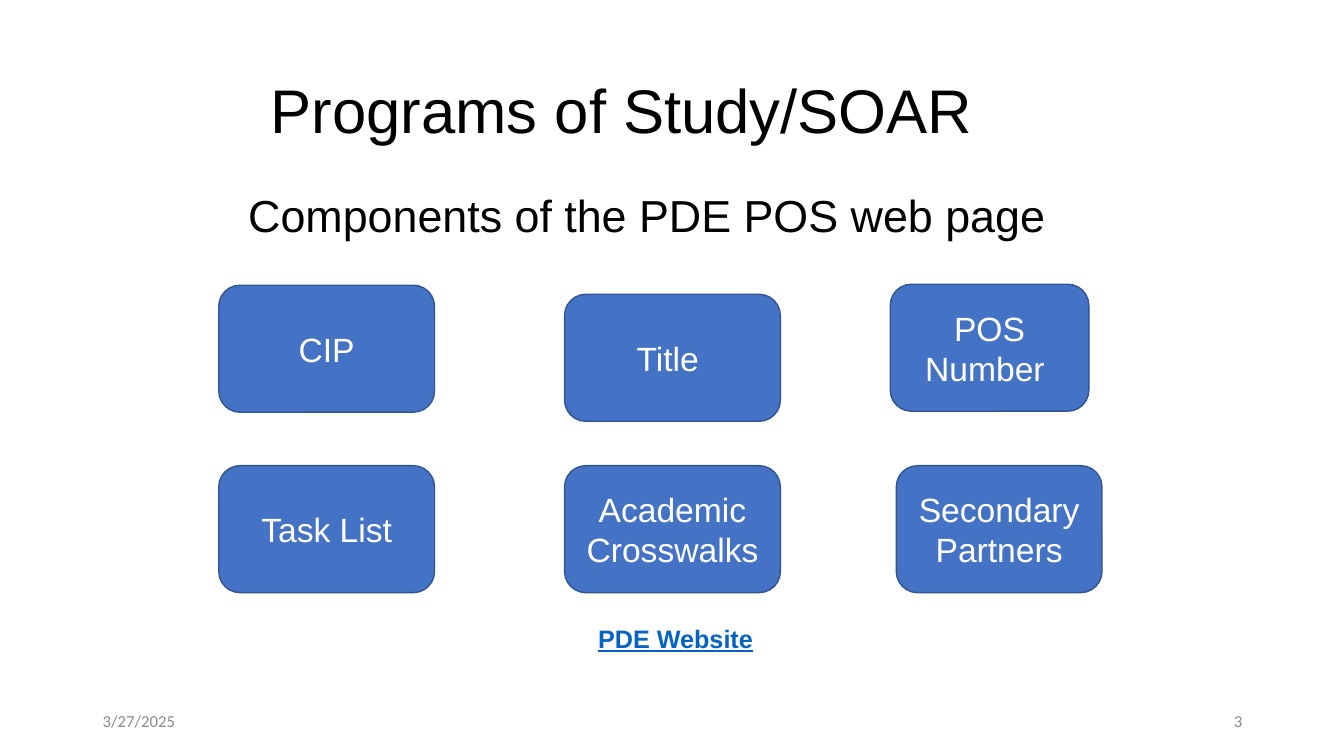
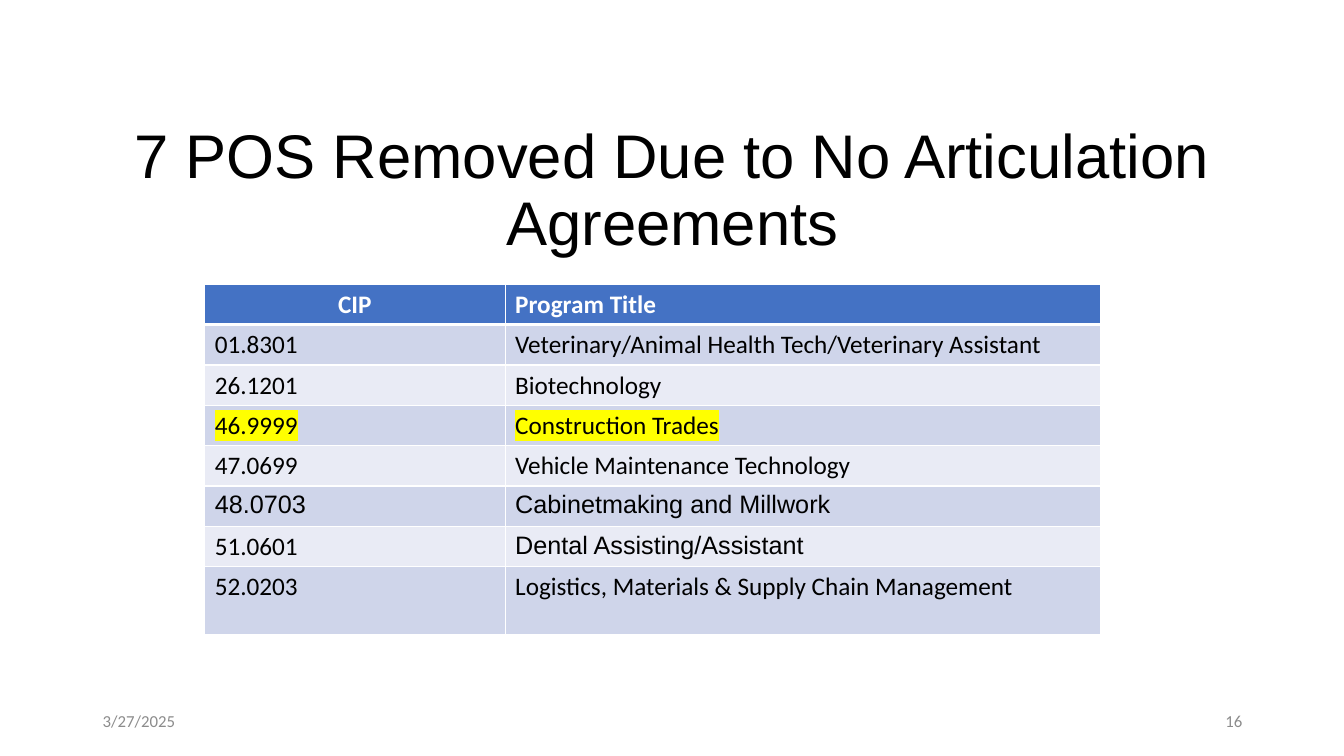
from lxml.etree import SubElement
from pptx import Presentation
from pptx.dml.color import RGBColor
from pptx.enum.shapes import MSO_SHAPE as Shape
from pptx.enum.text import MSO_ANCHOR as Anchor, PP_ALIGN as Align
from pptx.oxml.ns import qn
from pptx.util import Inches, Pt

COLORS = {
    "text": "000000", "white": "FFFFFF", "footer": "8C8C8C",
    "blue": "4472C4", "outline": "325491", "link": "0563C1",
    "band_dark": "CFD5EA", "band_light": "E9EBF5", "highlight": "FFFF00",
}
HEADING_FONT, BODY_FONT = "Arial", "Calibri"
DATE = "3/27/2025"

COMPONENTS_TITLE = "Programs of Study/SOAR"
COMPONENTS_SUBTITLE = "Components of the PDE POS web page"
# Label, left, top, width; some labels end in a no-break space
COMPONENTS = [
    ("CIP", 2.17, 2.83, 2.14),
    ("Title ", 5.6, 2.92, 2.14),
    ("POS Number ", 8.83, 2.82, 1.97),
    ("Task List", 2.17, 4.62, 2.14),
    ("Academic Crosswalks", 5.6, 4.62, 2.14),
    ("Secondary Partners", 8.89, 4.62, 2.04),
]
COMPONENT_HEIGHT = 1.26
WEBSITE_LABEL = "PDE Website"

REMOVED_TITLE = "7 POS Removed Due to No Articulation Agreements"
REMOVED_HEADER = ("CIP", "Program Title")
REMOVED_PROGRAMS = [
    ("01.8301", "Veterinary/Animal Health Tech/Veterinary Assistant"),
    ("26.1201", "Biotechnology"),
    ("46.9999", "Construction Trades"),
    ("47.0699", "Vehicle Maintenance Technology"),
    ("48.0703", "Cabinetmaking and Millwork"),
    ("51.0601", "Dental Assisting/Assistant"),
    ("52.0203", "Logistics, Materials & Supply Chain Management"),
]
HIGHLIGHTED_CIP = "46.9999"
ARIAL_CELLS = {"48.0703", "Cabinetmaking and Millwork", "Dental Assisting/Assistant"}
COLUMN_WIDTHS = (2.98, 5.91)
ROW_HEIGHT, LAST_ROW_HEIGHT = 0.39, 0.67


def rgb(name):
    return RGBColor.from_string(COLORS[name])


def write(frame, text, size, color, font=HEADING_FONT, align=Align.LEFT, bold=False):
    """Fill a text frame with one styled paragraph and return the paragraph."""
    paragraph = frame.paragraphs[0]
    paragraph.text = text
    paragraph.alignment = align
    style = paragraph.font
    style.name, style.size, style.bold = font, Pt(size), bold
    style.color.rgb = rgb(color)
    return paragraph


def add_text(slide, box, text, size, color, anchor=Anchor.TOP, **style):
    frame = slide.shapes.add_textbox(*map(Inches, box)).text_frame
    frame.word_wrap = True
    frame.vertical_anchor = anchor
    return write(frame, text, size, color, **style)


def add_slide(prs, title, title_left, title_top, number):
    """Add a slide with its title, date and slide number."""
    slide = prs.slides.add_slide(prs.slide_layouts[6])
    heading = add_text(slide, (title_left, title_top, 11.5, 1.45), title, 44, "text",
                       Anchor.MIDDLE, align=Align.CENTER)
    heading.line_spacing = 0.9
    for text, left, align in ((DATE, 0.92, Align.LEFT), (number, 9.42, Align.RIGHT)):
        add_text(slide, (left, 6.95, 3, 0.4), text, 12, "footer", Anchor.MIDDLE,
                 font=BODY_FONT, align=align)
    return slide


def add_component(slide, label, left, top, width):
    box = slide.shapes.add_shape(Shape.ROUNDED_RECTANGLE, Inches(left), Inches(top),
                                 Inches(width), Inches(COMPONENT_HEIGHT))
    box.shadow.inherit = False
    box.fill.solid()
    box.fill.fore_color.rgb = rgb("blue")
    box.line.color.rgb = rgb("outline")
    box.line.width = Pt(1)
    box.text_frame.word_wrap = True
    box.text_frame.vertical_anchor = Anchor.MIDDLE
    write(box.text_frame, label, 24, "white", align=Align.CENTER)


def add_color_element(parent, tag, color):
    return SubElement(SubElement(parent, qn(tag)), qn("a:srgbClr"), val=COLORS[color])


def style_cell(cell, fill, bottom_width):
    """Draw white borders and a solid fill."""
    properties = cell._tc.get_or_add_tcPr()
    for side in "LRTB":
        width = Pt(bottom_width if side == "B" else 1)
        border = SubElement(properties, qn(f"a:ln{side}"), w=str(width))
        add_color_element(border, "a:solidFill", "white")
    cell.fill.solid()
    cell.fill.fore_color.rgb = rgb(fill)


def add_program_table(slide):
    rows = [REMOVED_HEADER, *REMOVED_PROGRAMS]
    heights = [ROW_HEIGHT] * len(REMOVED_PROGRAMS) + [LAST_ROW_HEIGHT]
    table = slide.shapes.add_table(len(rows), len(COLUMN_WIDTHS), Inches(2.03), Inches(2.82),
                                   Inches(sum(COLUMN_WIDTHS)), Inches(sum(heights))).table
    for column, width in zip(table.columns, COLUMN_WIDTHS):
        column.width = Inches(width)
    for r, (values, height) in enumerate(zip(rows, heights)):
        table.rows[r].height = Inches(height)
        header = r == 0
        fill = "blue" if header else "band_dark" if r % 2 else "band_light"
        for c, text in enumerate(values):
            cell = table.cell(r, c)
            style_cell(cell, fill, 3 if header else 1)
            paragraph = write(
                cell.text_frame, text, 18, "white" if header else "text",
                font=HEADING_FONT if text in ARIAL_CELLS else BODY_FONT,
                align=Align.CENTER if header and c == 0 else Align.LEFT, bold=header)
            if values[0] == HIGHLIGHTED_CIP:
                run_properties = paragraph.runs[0]._r.get_or_add_rPr()
                add_color_element(run_properties, "a:highlight", "highlight")


def main():
    prs = Presentation()
    prs.slide_width, prs.slide_height = Inches(13.33), Inches(7.5)

    components = add_slide(prs, COMPONENTS_TITLE, 0.42, 0.4, "3")
    # The subtitle is centred right of a half-inch indent
    add_text(components, (0.92, 1.87, 11, 0.7), COMPONENTS_SUBTITLE, 32, "text",
             align=Align.CENTER).line_spacing = 0.9
    for component in COMPONENTS:
        add_component(components, *component)
    website = add_text(components, (3.49, 6.13, 6.42, 0.4), WEBSITE_LABEL, 18, "link",
                       align=Align.CENTER, bold=True)
    website.font.underline = True

    removed = add_slide(prs, REMOVED_TITLE, 0.92, 1.18, "16")
    add_program_table(removed)

    prs.save("out.pptx")


if __name__ == "__main__":
    main()
